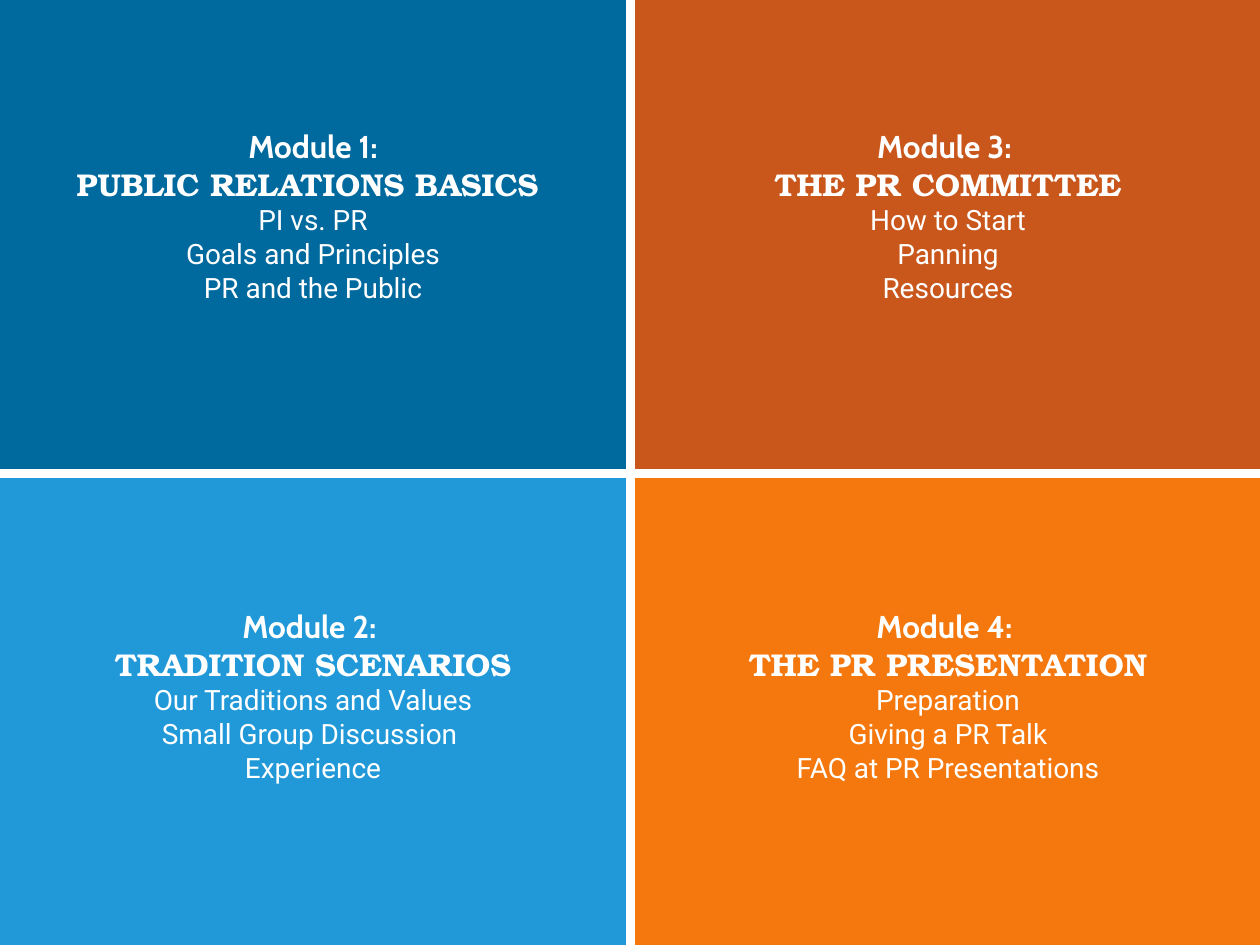
from pptx import Presentation
from pptx.dml.color import RGBColor
from pptx.enum.shapes import MSO_SHAPE
from pptx.enum.text import MSO_ANCHOR, PP_ALIGN
from pptx.util import Emu, Pt

RECT = MSO_SHAPE.RECTANGLE
MIDDLE = MSO_ANCHOR.MIDDLE
CENTER = PP_ALIGN.CENTER

PX_PER_INCH = 126
SLIDE_W, SLIDE_H = 1260, 945
TILE_W, TILE_H = 626, 471
STEP_X, STEP_Y = 635, 480
TOP = -2

MODULES = [
    (1, 1, "F4780D", "Module 4: ", "THE PR PRESENTATION",
     ["Preparation", "Giving a PR Talk", "FAQ at PR Presentations"]),
    (1, 0, "C9571C", "Module 3: ", "THE PR COMMITTEE",
     ["How to Start", "Panning", "Resources"]),
    (0, 1, "2199D8", "Module 2: ", "TRADITION SCENARIOS",
     ["Our Traditions and Values", "Small Group Discussion ", "Experience"]),
    (0, 0, "00699D", "Module 1:", "PUBLIC RELATIONS BASICS ",
     ["PI vs. PR", "Goals and Principles", "PR and the Public"]),
]


def px(n):
    """Turn whole pixels into EMU."""
    return Emu(round(n * 914400 / PX_PER_INCH))


def color(value):
    """Turn a hex string into a colour."""
    return RGBColor.from_string(value)


def add_line(p, text, font, size, bold):
    """Fill a paragraph with one centred white run."""
    p.alignment = CENTER
    r = p.add_run()
    r.text = text
    r.font.name = font
    r.font.size = Pt(size)
    r.font.bold = bold
    r.font.color.rgb = color("FFFFFF")


def add_module(s, x, y, w, h, fill, label, title, topics):
    """Draw one module tile with its label, title and topics."""
    sp = s.shapes.add_shape(RECT, px(x), px(y), px(w), px(h))
    sp.shadow.inherit = False
    sp.fill.solid()
    sp.fill.fore_color.rgb = color(fill)
    sp.line.fill.background()
    tf = sp.text_frame
    tf.word_wrap = True
    tf.vertical_anchor = MIDDLE
    tf.margin_top, tf.margin_bottom = px(6), px(42)
    add_line(tf.paragraphs[0], label, "Cabin", 18, True)
    add_line(tf.add_paragraph(), title, "TeX Gyre Bonum", 18, True)
    for topic in topics:
        add_line(tf.add_paragraph(), topic, "Roboto", 16, False)


def main():
    """Build the slide of four module tiles."""
    prs = Presentation()
    prs.slide_width, prs.slide_height = px(SLIDE_W), px(SLIDE_H)
    s = prs.slides.add_slide(prs.slide_layouts[6])
    for col, row, fill, label, title, topics in MODULES:
        add_module(s, col * STEP_X, TOP + row * STEP_Y, TILE_W, TILE_H,
                   fill, label, title, topics)
    prs.save("out.pptx")


if __name__ == "__main__":
    main()
